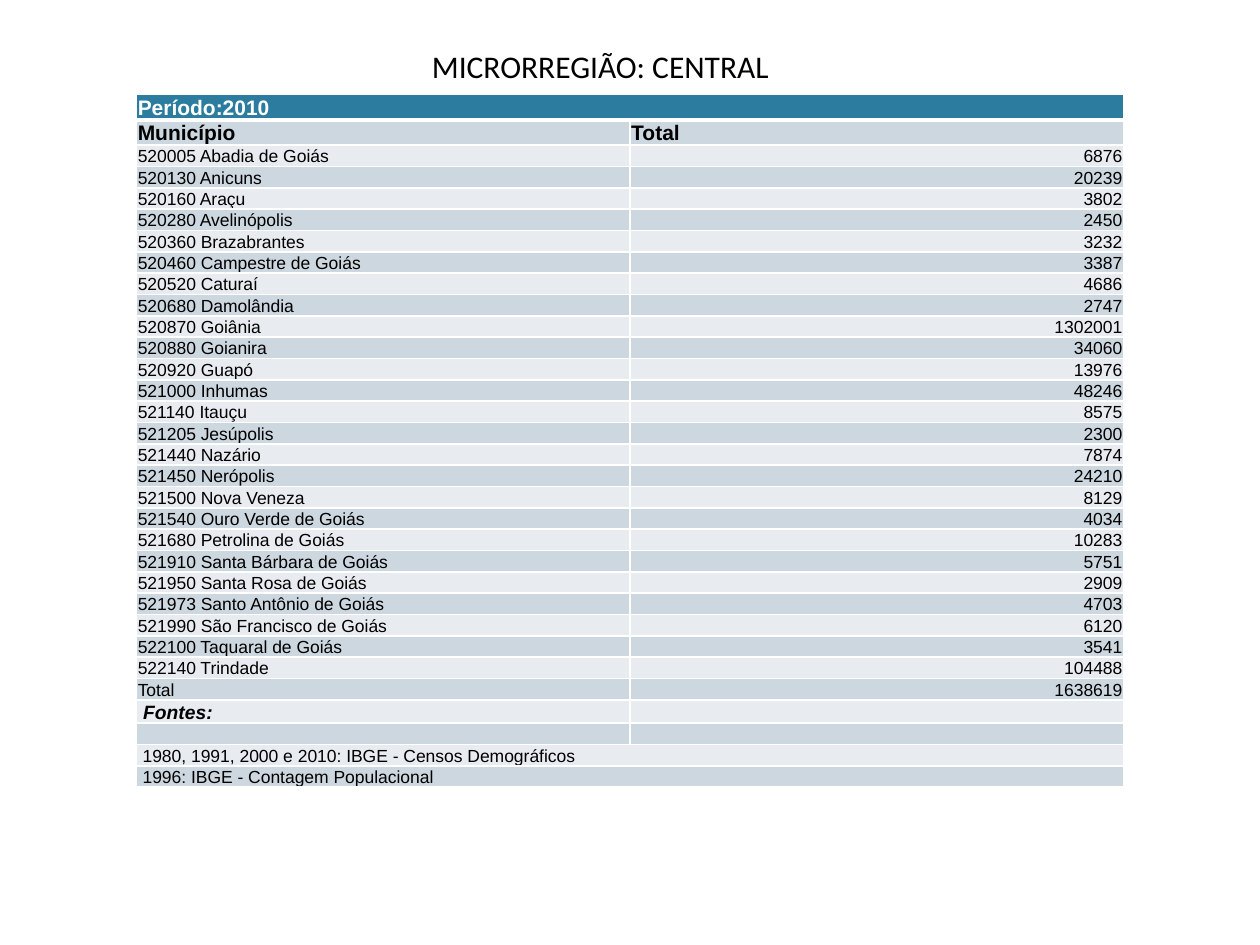
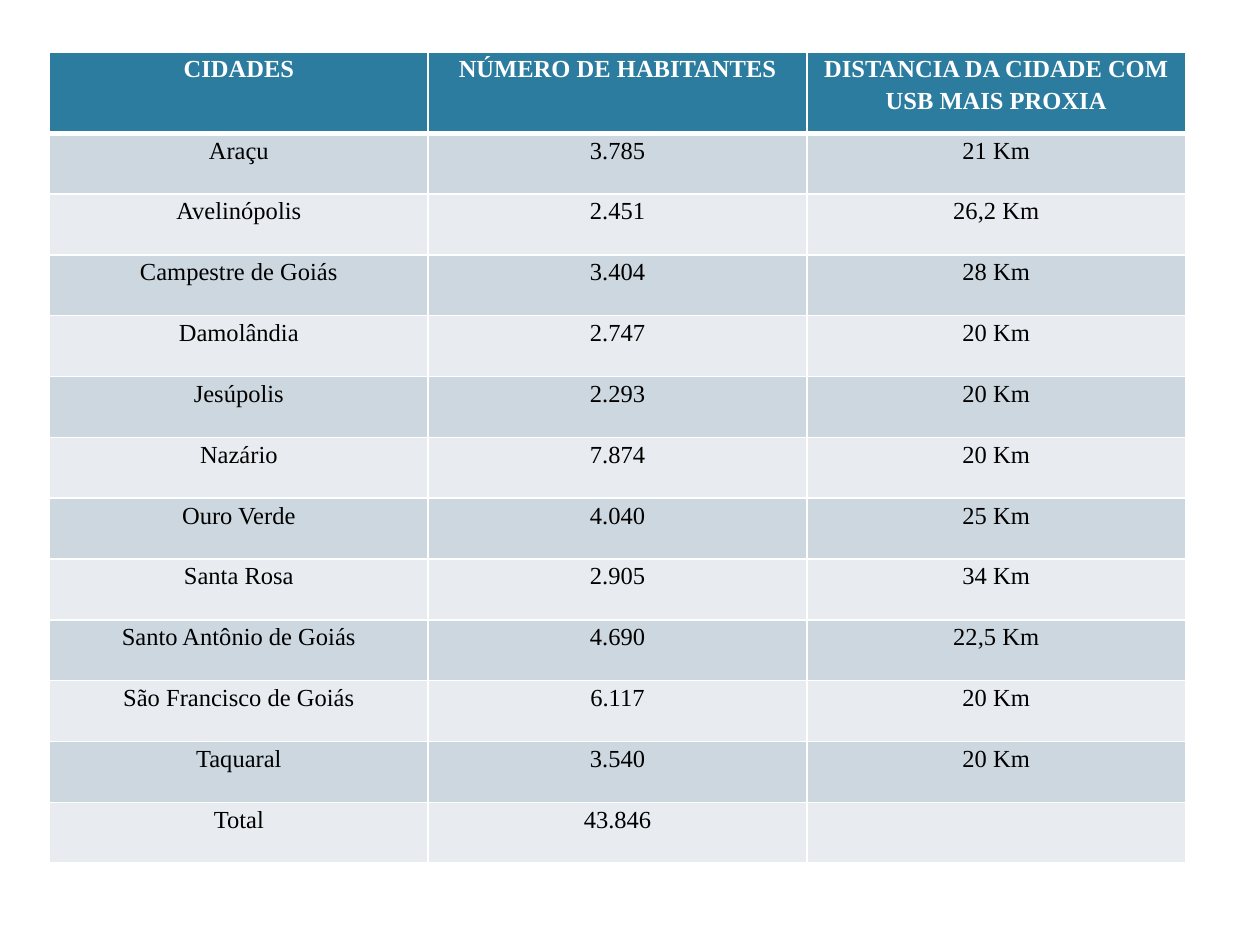
import pptx
import pptx.util
import pptx.dml.color
import pptx.enum.text
import pptx.oxml
import pptx.oxml.ns

Pt = pptx.util.Pt
ALIGN = pptx.enum.text.PP_ALIGN
ANCHOR = pptx.enum.text.MSO_ANCHOR

COLORS = {
    "header": "2C7C9F",
    "dark_band": "CDD7DF",
    "light_band": "E8ECF0",
    "rule": "FFFFFF",
    "header_text": "FFFFFF",
    "text": "000000",
}

POPULATION_2010 = [
    ("520005 Abadia de Goiás", "6876"),
    ("520130 Anicuns", "20239"),
    ("520160 Araçu", "3802"),
    ("520280 Avelinópolis", "2450"),
    ("520360 Brazabrantes", "3232"),
    ("520460 Campestre de Goiás", "3387"),
    ("520520 Caturaí", "4686"),
    ("520680 Damolândia", "2747"),
    ("520870 Goiânia", "1302001"),
    ("520880 Goianira", "34060"),
    ("520920 Guapó", "13976"),
    ("521000 Inhumas", "48246"),
    ("521140 Itauçu", "8575"),
    ("521205 Jesúpolis", "2300"),
    ("521440 Nazário", "7874"),
    ("521450 Nerópolis", "24210"),
    ("521500 Nova Veneza", "8129"),
    ("521540 Ouro Verde de Goiás", "4034"),
    ("521680 Petrolina de Goiás", "10283"),
    ("521910 Santa Bárbara de Goiás", "5751"),
    ("521950 Santa Rosa de Goiás", "2909"),
    ("521973 Santo Antônio de Goiás", "4703"),
    ("521990 São Francisco de Goiás", "6120"),
    ("522100 Taquaral de Goiás", "3541"),
    ("522140 Trindade", "104488"),
    ("Total", "1638619"),
]
SOURCES = [
    (" Fontes:", ""),
    ("", ""),
    (" 1980, 1991, 2000 e 2010: IBGE - Censos Demográficos", ""),
    (" 1996: IBGE - Contagem Populacional", ""),
]
DISTANCES = [
    ("CIDADES", "NÚMERO DE HABITANTES", "DISTANCIA DA CIDADE COM USB MAIS PROXIA"),
    ("Araçu", "3.785", "21 Km"),
    ("Avelinópolis", "2.451", "26,2 Km"),
    ("Campestre de Goiás", "3.404", "28 Km"),
    ("Damolândia", "2.747", "20 Km"),
    ("Jesúpolis", "2.293", "20 Km"),
    ("Nazário", "7.874", "20 Km"),
    ("Ouro Verde", "4.040", "25 Km"),
    ("Santa Rosa", "2.905", "34 Km"),
    ("Santo Antônio de Goiás", "4.690", "22,5 Km"),
    ("São Francisco de Goiás", "6.117", "20 Km"),
    ("Taquaral", "3.540", "20 Km"),
    ("Total", "43.846", ""),
]


def rgb(key):
    return pptx.dml.color.RGBColor.from_string(COLORS[key])


def set_font(paragraph, face, size, color, bold=False, italic=False):
    font = paragraph.font
    font.name, font.size = face, Pt(size)
    font.bold, font.italic = bold, italic
    font.color.rgb = rgb(color)


def add_cell_rules(cell, row):
    """White rules, heavier between the header and the body."""
    widths = {"lnL": 1, "lnR": 1, "lnT": 3 if row == 1 else 1, "lnB": 3 if row == 0 else 1}
    properties = cell._tc.get_or_add_tcPr()
    for side, width in widths.items():
        properties.append(pptx.oxml.parse_xml(
            f'<a:{side} {pptx.oxml.ns.nsdecls("a")} w="{Pt(width)}"><a:solidFill>'
            f'<a:srgbClr val="{COLORS["rule"]}"/></a:solidFill></a:{side}>'))


def add_banded_table(slide, box, rows, heights, margins, face, size):
    """Table with equal columns, a coloured header row and alternating bands."""
    left, top, width = box
    columns = len(rows[0])
    table = slide.shapes.add_table(
        len(rows), columns, Pt(left), Pt(top), Pt(width), Pt(sum(heights))).table
    table.horz_banding = False
    for column in table.columns:
        column.width = Pt(width / columns)
    for r, (texts, height) in enumerate(zip(rows, heights)):
        table.rows[r].height = Pt(height)
        band = "header" if r == 0 else "dark_band" if r % 2 else "light_band"
        for c, text in enumerate(texts):
            cell = table.cell(r, c)
            add_cell_rules(cell, r)
            cell.fill.solid()
            cell.fill.fore_color.rgb = rgb(band)
            (cell.margin_left, cell.margin_top,
             cell.margin_right, cell.margin_bottom) = map(Pt, margins)
            if text:
                cell.text = text
            paragraph = cell.text_frame.paragraphs[0]
            set_font(paragraph, face, size, "header_text" if r == 0 else "text", bold=r == 0)
            if not text:
                # Keeps an empty cell from stretching its row
                paragraph._p.get_or_add_endParaRPr().set("sz", str(size * 100))
    return table


def add_region_title(slide, box):
    title = slide.shapes.add_textbox(*map(Pt, box)).text_frame
    title.word_wrap = False
    title.auto_size = pptx.enum.text.MSO_AUTO_SIZE.SHAPE_TO_FIT_TEXT
    title.text = "MICRORREGIÃO: CENTRAL"
    set_font(title.paragraphs[0], "Calibri", 18, "text")


def add_population_table(slide, box):
    rows = [("Período:2010", ""), ("Município", "Total")] + POPULATION_2010 + SOURCES
    sources_row = len(rows) - len(SOURCES)
    heights = [12.2] * len(rows)
    heights[0] = heights[1] = 14.5
    heights[sources_row] = 13.4
    table = add_banded_table(slide, box, rows, heights, (0.72, 0.72, 0.72, 0), "Arial", 10)
    for cell in table.iter_cells():
        cell.vertical_anchor = ANCHOR.BOTTOM

    # Period and column headings
    for r, c, color in [(0, 0, "header_text"), (1, 0, "text"), (1, 1, "text")]:
        set_font(table.cell(r, c).text_frame.paragraphs[0], "Arial", 12, color, bold=True)
    # Population figures
    for r in range(2, sources_row):
        table.cell(r, 1).text_frame.paragraphs[0].alignment = ALIGN.RIGHT
    # Sources
    set_font(table.cell(sources_row, 0).text_frame.paragraphs[0],
             "Arial", 11, "text", bold=True, italic=True)
    # Rows that span both columns
    for r in (0, len(rows) - 2, len(rows) - 1):
        table.cell(r, 0).merge(table.cell(r, 1))


def add_distance_table(slide, box):
    heights = [46.4] + [34.77] * (len(DISTANCES) - 1)
    table = add_banded_table(slide, box, DISTANCES, heights, (5, 0, 5, 0),
                             "Times New Roman", 14)
    for cell in table.iter_cells():
        paragraph = cell.text_frame.paragraphs[0]
        paragraph.alignment = ALIGN.CENTER
        paragraph.line_spacing = 1.15
        paragraph.space_after = Pt(10)


def main():
    deck = pptx.Presentation()
    deck.slide_width, deck.slide_height = Pt(720), Pt(540)
    blank = deck.slide_layouts[6]

    population = deck.slides.add_slide(blank)
    add_population_table(population, (78, 54, 564))
    add_region_title(population, (239.7, 23.4, 254, 29))

    distances = deck.slides.add_slide(blank)
    add_distance_table(distances, (28.3, 29.8, 649.2))

    deck.save("out.pptx")


if __name__ == "__main__":
    main()
